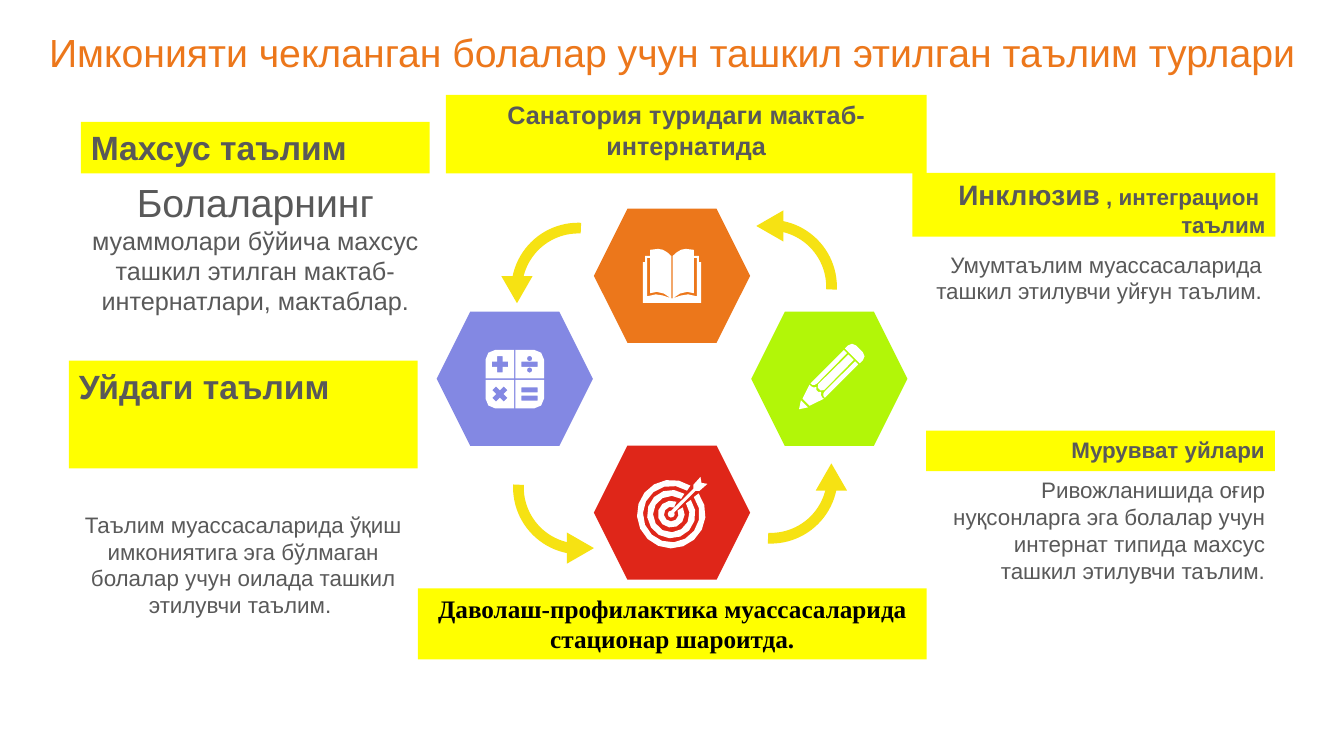
from math import cos, radians, sin

from pptx import Presentation
from pptx.dml.color import RGBColor
from pptx.enum.shapes import MSO_SHAPE
from pptx.enum.text import MSO_ANCHOR, PP_ALIGN
from pptx.util import Pt

ORANGE = RGBColor(0xEC, 0x77, 0x1B)
VIOLET = RGBColor(0x83, 0x88, 0xE3)
LIME = RGBColor(0xB2, 0xF6, 0x08)
RED = RGBColor(0xDF, 0x26, 0x19)
GOLD = RGBColor(0xF6, 0xE2, 0x13)
YELLOW = RGBColor(0xFF, 0xFF, 0x00)
WHITE = RGBColor(0xFF, 0xFF, 0xFF)
GRAY = RGBColor(0x59, 0x59, 0x59)
BLACK = RGBColor(0x00, 0x00, 0x00)

LEFT, CENTER, RIGHT = PP_ALIGN.LEFT, PP_ALIGN.CENTER, PP_ALIGN.RIGHT
SIGNS = (-1, 1)


# Outline geometry, in points around an icon's centre
def arc(radius, start, end, x=0, y=0):
    steps = max(2, round(abs(end - start) / 360 * (7 + radius / 2.5)))
    angles = [radians(start + (end - start) * i / steps) for i in range(steps + 1)]
    return [(x + radius * cos(a), y - radius * sin(a)) for a in angles]


def curve(*controls, steps=3):
    points = []
    for i in range(steps + 1):
        t = i / steps
        weights = ((1 - t) ** 3, 3 * t * (1 - t) ** 2, 3 * t * t * (1 - t), t ** 3)
        points.append(tuple(sum(w * c[axis] for w, c in zip(weights, controls))
                            for axis in (0, 1)))
    return points


def bar(x, y, half_width, half_height):
    return [(x - half_width, y - half_height), (x + half_width, y - half_height),
            (x + half_width, y + half_height), (x - half_width, y + half_height)]


def cross(x, y, angle, arm=5.8, half=1.9):
    corners = [(half, half), (arm, half), (arm, -half)]
    points = []
    for turn in range(4):
        c, s = cos(radians(angle - 90 * turn)), sin(radians(angle - 90 * turn))
        points += [(x + a * c - b * s, y + a * s + b * c) for a, b in corners]
    return points


def mirror(contour):
    return [(-x, y) for x, y in contour]


def book_icon():
    cover = curve((-0.5, -14.1), (-3.4, -17), (-6.2, -19.2), (-9.8, -19.2))
    cover += [(-15.6, -18.5), (-15.6, -14.1), (-19.2, -14.1), (-19.2, -9.8),
              (-20.8, -9.8), (-20.8, 19.4), (0, 19.4), (0, 16.2), (-0.5, 16.2)]
    gap = [(-17.8, -12.7), (-15.6, -12.7)]
    gap += curve((-15.6, 12.5), (-11.3, 10.3), (-5.5, 11.8), (-0.8, 16))
    gap += curve((-0.8, 16), (-7, 14), (-10.6, 11.8), (-17.8, 14.7))[1:]
    return [cover, gap, mirror(cover), mirror(gap)]


def calculator_icon():
    tile = [(0.5, 0.5), (20.9, 0.5)] + arc(7, 0, -90, 13.9, 13.9) + [(0.5, 20.9)]
    tiles = [[(sx * x, sy * y) for x, y in tile] for sx in SIGNS for sy in SIGNS]
    place = 10.6
    dots = [arc(1.9, 0, 360, place, -place + 4.1 * s) for s in SIGNS]
    equals = [bar(place, place + 2.9 * s, 5.8, 1.8) for s in SIGNS]
    return tiles + dots + equals + [cross(-place, -place, 0), cross(-place, place, 45),
                                    bar(place, -place, 5.8, 1.8)]


def pencil_icon():
    tip = [(-3.6, 25), (3.6, 25), (0, 30.5)]
    cone = [(-3.6, 23.4), (3.6, 23.4)]
    cone += curve((7.2, 12.7), (6, 13.2), (3.5, 12.7), (2.4, 10.6))
    cone += curve((2.4, 10.6), (1.2, 12.7), (-1.2, 12.7), (-2.4, 10.6))[1:]
    cone += curve((-2.4, 10.6), (-3.5, 12.7), (-6, 13.2), (-7.2, 12.7))[1:]
    side = [(-4.1, -22), (-7.3, -22)]
    side += curve((-7.3, 11.7), (-5.5, 12), (-3.9, 10.8), (-3.9, 8.2))
    middle = [(2.7, -22), (-2.7, -22)]
    middle += curve((-3, 8.1), (-2.8, 11.2), (2.8, 11.2), (3, 8.1))
    cap = [(-7.5, -23.3)] + arc(4, 180, 90, -3.5, -26.5)
    cap += arc(4, 90, 0, 3.5, -26.5) + [(7.5, -23.3)]
    return [tip, cone, side, mirror(side), middle, cap]


def target_icon():
    rings = [(24.5, 20.2, 56, 37), (17.3, 13, 57, 36), (9.6, 5.2, 67, 30)]
    contours = [arc(outer, start, end + 360) + arc(inner, end + 360, start)
                for outer, inner, start, end in rings]
    dart = [(15.8, -20.9), (20.9, -26.6), (21.6, -22.3), (25.9, -21.6),
            (20.2, -16.6), (17.3, -16.6)]
    dart += arc(2.5, 30, -270) + [(15.8, -18)]
    return contours + [dart]


# Elements
def paint(shape, color):
    shape.shadow.inherit = False
    shape.fill.solid()
    shape.fill.fore_color.rgb = color
    shape.line.fill.background()


def add_solid(page, kind, at, color, rotation=0, adjustments=()):
    shape = page.shapes.add_shape(kind, *[Pt(length) for length in at])
    for i, value in enumerate(adjustments):
        shape.adjustments[i] = value
    shape.rotation = rotation
    paint(shape, color)
    return shape


def add_icon(page, contours, x, y, rotation=0):
    builder = None
    for contour in contours:
        points = [(Pt(a), Pt(b)) for a, b in contour]
        if builder is None:
            builder = page.shapes.build_freeform(*points[0])
        else:
            builder.move_to(*points[0])
        builder.add_line_segments(points[1:], close=True)
    icon = builder.convert_to_shape(Pt(x), Pt(y))
    icon.rotation = rotation
    paint(icon, WHITE)


def add_arrow(page, arc_at, arc_rotation, head_at, head_rotation):
    arrow = page.shapes.add_group_shape()
    add_solid(arrow, MSO_SHAPE.BLOCK_ARC, (*arc_at, 95.8, 95.8), GOLD,
              arc_rotation, (108, 163.46, 0.08))
    add_solid(arrow, MSO_SHAPE.ISOSCELES_TRIANGLE, (*head_at, 22.3, 19.4), GOLD,
              head_rotation)


def write(box, lines, align, bold=False, color=GRAY, font="Arial"):
    """Each line is a list of (wording, size) spans."""
    frame = box.text_frame
    frame.word_wrap = True
    frame.vertical_anchor = MSO_ANCHOR.TOP
    for i, spans in enumerate(lines):
        para = frame.paragraphs[0] if i == 0 else frame.add_paragraph()
        para.alignment = align
        for wording, size in spans:
            span = para.add_run()
            span.text = wording
            span.font.size = Pt(size)
            span.font.name = font
            span.font.bold = bold
            span.font.color.rgb = color


def add_label(page, at, lines, align, **style):
    write(add_solid(page, MSO_SHAPE.RECTANGLE, at, YELLOW), lines, align, bold=True, **style)


def add_text(page, at, spans, align, **style):
    box = page.shapes.add_textbox(*[Pt(length) for length in at])
    write(box, [spans], align, **style)
    return box


def main():
    deck = Presentation()
    deck.slide_width, deck.slide_height = Pt(960), Pt(540)
    page = deck.slides.add_slide(deck.slide_layouts[6])

    # Ring of hexagons
    for x, y, color in ((480, 197, ORANGE), (367.7, 270.6, VIOLET),
                        (592.4, 270.6, LIME), (480, 366.2, RED)):
        add_solid(page, MSO_SHAPE.HEXAGON, (x - 55.8, y - 47.9, 111.6, 95.8), color,
                  adjustments=(0.25,))

    # Curved arrows between them
    add_arrow(page, (365.2, 159.1), 0, (358.1, 197.2), 180)
    add_arrow(page, (366.5, 300.2), 270, (403.4, 381.8), 90)
    add_arrow(page, (502.6, 292.5), 180, (582.7, 331), 0)
    add_arrow(page, (502, 157), 90, (538.8, 151.7), 270)

    # Icons
    add_icon(page, book_icon(), 480, 197)
    add_icon(page, target_icon(), 479.5, 367.2)
    add_icon(page, calculator_icon(), 367.7, 270.8)
    add_icon(page, pencil_icon(), 592.3, 270.8, 45)

    # Descriptions
    add_text(page, (57.8, 123.8, 249.1, 133.9),
             [("Болаларнинг", 28),
              (" муаммолари бўйича махсус ташкил этилган мактаб-интернатлари, мактаблар.", 18)],
             CENTER)
    add_text(page, (49.2, 361.4, 249.1, 105.8),
             [("Таълим муассасаларида ўқиш имкониятига эга бўлмаган болалар учун "
               "оилада ташкил этилувчи таълим. ", 16)], CENTER)
    inclusive = add_text(page, (659.5, 128.9, 249.1, 72.7),
                         [("Умумтаълим муассасаларида ташкил этилувчи уйғун таълим.", 16)],
                         RIGHT)
    inclusive.text_frame.margin_top = Pt(61.9)
    inclusive.text_frame.margin_bottom = Pt(0)
    add_text(page, (661.7, 336.6, 249.1, 106.6),
             [("Ривожланишида оғир нуқсонларга эга болалар учун интернат типида "
               "махсус ташкил этилувчи таълим.", 16)], RIGHT)

    # Yellow labels
    add_label(page, (57.8, 87.1, 249.1, 36.7), [[("Махсус таълим", 24)]], LEFT)
    add_label(page, (49.2, 257.6, 249.1, 77), [[("Уйдаги таълим", 24)]], LEFT)
    add_label(page, (651.8, 123.6, 259.2, 45.4),
              [[("Инклюзив", 20), (" , интеграцион  таълим", 16)]], RIGHT)
    add_label(page, (661.5, 307.7, 249.1, 28.8), [[("Мурувват уйлари", 16)]], RIGHT)
    add_label(page, (318.5, 67.7, 343.4, 56.2),
              [[("Санатория туридаги мактаб-интернатида", 18)]], CENTER)
    add_label(page, (298.6, 420.2, 363.4, 50.9),
              [[("Даволаш-профилактика муассасаларида", 18)], [(" стационар шароитда. ", 18)]],
              CENTER, color=BLACK, font="Times New Roman")

    # Title
    title = add_text(page, (0, 13.8, 960, 50.4),
                     [("Имконияти чекланган болалар учун ташкил этилган таълим турлари", 28)],
                     CENTER, color=ORANGE)
    title.text_frame.vertical_anchor = MSO_ANCHOR.MIDDLE
    title.text_frame.paragraphs[0].line_spacing = 0.9

    deck.save("out.pptx")


if __name__ == "__main__":
    main()
